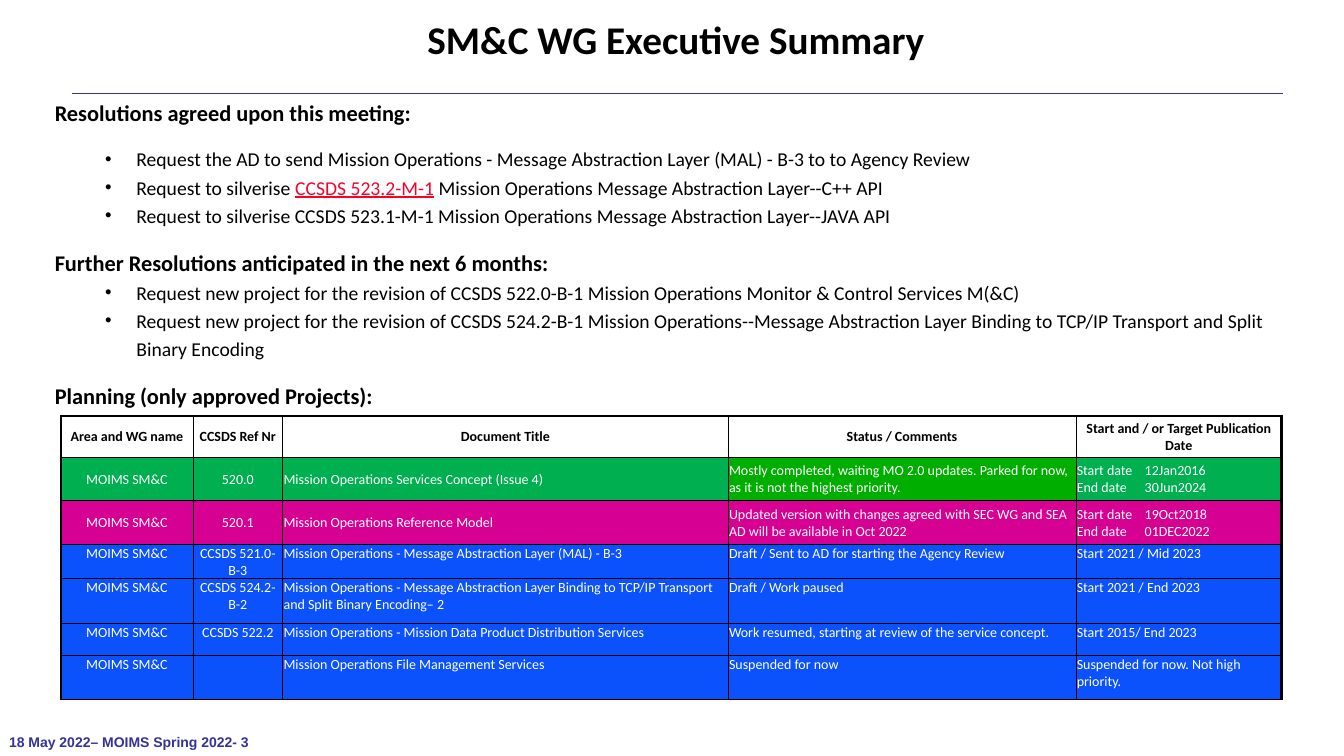
import dataclasses
import typing

import lxml.etree
import pptx
import pptx.dml.color
import pptx.enum.shapes
import pptx.enum.text
import pptx.oxml.ns
import pptx.util

Pt = pptx.util.Pt
RGBColor = pptx.dml.color.RGBColor
PP_ALIGN = pptx.enum.text.PP_ALIGN
MSO_ANCHOR = pptx.enum.text.MSO_ANCHOR
qn = pptx.oxml.ns.qn

BLACK = RGBColor(0x00, 0x00, 0x00)
WHITE = RGBColor(0xFF, 0xFF, 0xFF)
NAVY = RGBColor(0x33, 0x33, 0x99)
RED = RGBColor(0xFC, 0x01, 0x28)
GREEN = RGBColor(0x00, 0xB0, 0x50)
STATUS_GREEN = RGBColor(0x00, 0xAE, 0x00)
MAGENTA = RGBColor(0xD6, 0x00, 0x93)
BLUE = RGBColor(0x0B, 0x52, 0xFC)

SECTION_GAP = 11.7
THIN, THICK = 0.5, 2
DATE_TAB = 48.5


@dataclasses.dataclass(frozen=True)
class Piece:
    text: str
    color: RGBColor = BLACK
    underline: bool = False


@dataclasses.dataclass(frozen=True)
class Line:
    pieces: tuple[Piece, ...]
    heading: bool = False
    gap: float = 0


@dataclasses.dataclass(frozen=True)
class Project:
    cells: tuple[str, ...]
    height: float
    fill: typing.Optional[RGBColor] = BLUE
    status_fill: typing.Optional[RGBColor] = None
    centred: bool = False
    header: bool = False


RESOLUTIONS = (
    Line((Piece("Resolutions agreed upon this meeting:"),), heading=True),
    Line((Piece("Request the AD to send Mission Operations - Message Abstraction Layer (MAL) - B-3 "
                "to to Agency Review"),), gap=SECTION_GAP),
    Line((Piece("Request to silverise "),
          Piece("CCSDS 523.2-M-1", RED, True),
          Piece(" Mission Operations Message Abstraction Layer--C++ API"))),
    Line((Piece("Request to silverise CCSDS 523.1-M-1 Mission Operations Message Abstraction "
                "Layer--JAVA API"),)),
    Line((Piece("Further Resolutions anticipated in the next 6 months:"),), heading=True, gap=SECTION_GAP),
    Line((Piece("Request new project for the revision of CCSDS 522.0-B-1 Mission Operations "
                "Monitor & Control Services M(&C)"),)),
    Line((Piece("Request new project for the revision of CCSDS 524.2-B-1 Mission Operations--Message "
                "Abstraction Layer Binding to TCP/IP Transport and Split Binary Encoding"),)),
    Line((Piece("Planning (only approved Projects):"),), heading=True, gap=SECTION_GAP),
)

COLUMN_WIDTHS = (94.3, 64.1, 318.2, 248.4, 147)
STATUS_COLUMN = 3
PROJECTS = (
    Project(("Area and WG name", "CCSDS Ref Nr", "Document Title", "Status / Comments",
             "Start and / or Target Publication Date"), 29.7, None, centred=True, header=True),
    Project(("MOIMS SM&C", "520.0", "Mission Operations Services Concept (Issue 4)",
             "Mostly completed, waiting MO 2.0 updates. Parked for now, as it is not the highest priority.",
             "Start date\t12Jan2016\nEnd date\t30Jun2024"), 31, GREEN, STATUS_GREEN, centred=True),
    Project(("MOIMS SM&C", "520.1", "Mission Operations Reference Model",
             "Updated version with changes agreed with SEC WG and SEA AD will be available in Oct 2022",
             "Start date\t19Oct2018\nEnd date\t01DEC2022"), 31, MAGENTA, centred=True),
    Project(("MOIMS SM&C", "CCSDS 521.0-B-3", "Mission Operations - Message Abstraction Layer (MAL) - B-3",
             "Draft / Sent to AD for starting the Agency Review", "Start 2021 / Mid 2023"), 24),
    Project(("MOIMS SM&C", "CCSDS 524.2-B-2",
             "Mission Operations - Message Abstraction Layer Binding to TCP/IP Transport and "
             "Split Binary Encoding– 2", "Draft / Work paused", "Start 2021 / End 2023"), 31.7),
    Project(("MOIMS SM&C", "CCSDS 522.2", "Mission Operations - Mission Data Product Distribution Services",
             "Work resumed, starting at review of the service concept.", "Start 2015/ End 2023"), 23),
    Project(("MOIMS SM&C", "", "Mission Operations File Management Services", "Suspended for now",
             "Suspended for now. Not high priority."), 31.7),
)


def add_run(paragraph, text: str, size: float, color: RGBColor, bold: bool,
            font: str = "Calibri", underline: bool = False) -> None:
    run = paragraph.add_run()
    run.text = text
    run.font.name, run.font.size = font, Pt(size)
    run.font.bold, run.font.underline = bold, underline
    run.font.color.rgb = color


def add_element(parent, tag: str, **attributes: object):
    return lxml.etree.SubElement(parent, qn(tag), {key: str(value) for key, value in attributes.items()})


def set_indent(paragraph, left: float, first: float, bulleted: bool = False) -> None:
    properties = paragraph._p.get_or_add_pPr()
    properties.set("marL", str(Pt(left)))
    properties.set("indent", str(Pt(first)))
    if bulleted:
        add_element(add_element(properties, "a:buClr"), "a:srgbClr", val=BLACK)
        add_element(properties, "a:buSzPct", val=95000)
        add_element(properties, "a:buFont", typeface="Arial")
        add_element(properties, "a:buChar", char="•")
    else:
        add_element(properties, "a:buNone")


def place(holder, left: float, top: float, width: float, height: float):
    holder.left, holder.top, holder.width, holder.height = Pt(left), Pt(top), Pt(width), Pt(height)
    frame = holder.text_frame
    frame.margin_left = frame.margin_right = frame.margin_top = frame.margin_bottom = Pt(4.5)
    frame.vertical_anchor = MSO_ANCHOR.TOP
    frame.auto_size = pptx.enum.text.MSO_AUTO_SIZE.NONE
    frame.word_wrap = True
    return frame


def fill_title(slide) -> None:
    heading = place(slide.shapes.title, 189.4, 10, 556.6, 41.8).paragraphs[0]
    set_indent(heading, 30, 0)
    heading.alignment = PP_ALIGN.CENTER
    heading.line_spacing = 0.9
    add_run(heading, "SM&C WG Executive Summary", 28, BLACK, True)


def fill_resolutions(slide) -> None:
    frame = place(slide.placeholders[1], 34.6, 62.6, 890, 414.7)
    for index, line in enumerate(RESOLUTIONS):
        paragraph = frame.add_paragraph() if index else frame.paragraphs[0]
        if line.heading:
            set_indent(paragraph, 0, 0)
        else:
            paragraph.level = 1
            set_indent(paragraph, 58.3, -22.3, bulleted=True)
        paragraph.alignment = PP_ALIGN.LEFT
        paragraph.line_spacing = 1.2
        paragraph.space_before, paragraph.space_after = Pt(line.gap), Pt(0)
        for piece in line.pieces:
            add_run(paragraph, piece.text, 16 if line.heading else 14, piece.color,
                    line.heading, underline=piece.underline)


def add_rule(slide) -> None:
    rule = slide.shapes.add_connector(pptx.enum.shapes.MSO_CONNECTOR.STRAIGHT,
                                      Pt(51.4), Pt(66.2), Pt(916.6), Pt(66.2))
    rule.line.color.rgb = NAVY
    rule.line.width = Pt(0.13)
    add_element(rule._element.spPr, "a:effectLst")


def add_footer(slide) -> None:
    frame = slide.shapes.add_textbox(Pt(0), Pt(521.3), Pt(192), Pt(18.7)).text_frame
    frame.margin_left = frame.margin_right = Pt(6.5)
    frame.margin_top = frame.margin_bottom = Pt(3)
    frame.word_wrap = False
    add_run(frame.paragraphs[0], "18 May 2022– MOIMS Spring 2022- 3", 10, NAVY, True, "Arial")


def set_borders(cell, widths: dict[str, float]) -> None:
    properties = cell._tc.get_or_add_tcPr()
    for position, (side, width) in enumerate(widths.items()):
        border = add_element(properties, f"a:{side}", w=Pt(width))
        add_element(add_element(border, "a:solidFill"), "a:srgbClr", val=BLACK)
        properties.insert(position, border)


def fill_cell(cell, project: Project, column: int) -> None:
    cell.margin_left = cell.margin_right = cell.margin_top = Pt(0.7)
    cell.margin_bottom = Pt(0)
    cell.vertical_anchor = MSO_ANCHOR.MIDDLE if project.centred else MSO_ANCHOR.TOP
    color = project.status_fill if column == STATUS_COLUMN and project.status_fill else project.fill
    if color is None:
        cell.fill.background()
    else:
        cell.fill.solid()
        cell.fill.fore_color.rgb = color
    last = len(COLUMN_WIDTHS) - 1
    set_borders(cell, {"lnL": THIN if column else THICK, "lnR": THICK if column == last else THIN,
                       "lnT": THICK if project.header else THIN, "lnB": THIN})
    for index, text in enumerate(project.cells[column].splitlines()):
        paragraph = cell.text_frame.add_paragraph() if index else cell.text_frame.paragraphs[0]
        if "\t" in text:
            tabs = add_element(paragraph._p.get_or_add_pPr(), "a:tabLst")
            add_element(tabs, "a:tab", pos=Pt(DATE_TAB), algn="l")
        paragraph.alignment = PP_ALIGN.CENTER if project.header or column < 2 else PP_ALIGN.LEFT
        add_run(paragraph, text, 10, BLACK if project.header else WHITE, project.header)


def add_planning(slide) -> None:
    planning = slide.shapes.add_table(len(PROJECTS), len(COLUMN_WIDTHS), Pt(43.5), Pt(297),
                                      Pt(sum(COLUMN_WIDTHS)), Pt(sum(p.height for p in PROJECTS))).table
    planning.first_row = planning.horz_banding = False
    for column, width in enumerate(COLUMN_WIDTHS):
        planning.columns[column].width = Pt(width)
    for row, project in enumerate(PROJECTS):
        planning.rows[row].height = Pt(project.height)
        for column in range(len(COLUMN_WIDTHS)):
            fill_cell(planning.cell(row, column), project, column)


def main() -> None:
    deck = pptx.Presentation()
    deck.slide_width, deck.slide_height = Pt(960), Pt(540)
    summary = deck.slides.add_slide(deck.slide_layouts[1])
    fill_title(summary)
    fill_resolutions(summary)
    add_rule(summary)
    add_footer(summary)
    add_planning(summary)
    deck.save("out.pptx")


if __name__ == "__main__":
    main()
